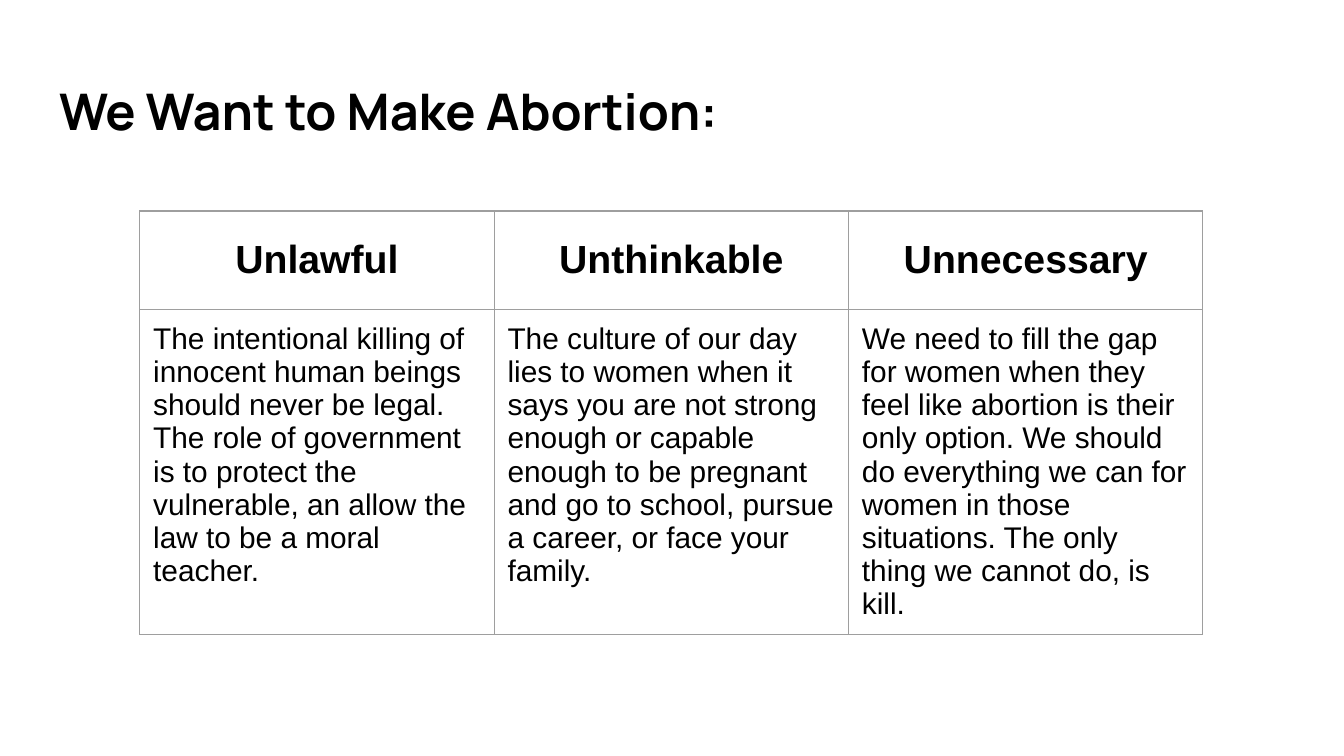
from dataclasses import dataclass

from lxml import etree
from pptx import Presentation
from pptx.dml.color import RGBColor
from pptx.enum.text import MSO_ANCHOR, PP_ALIGN
from pptx.oxml.ns import qn
from pptx.util import Inches, Pt

MIDDLE, TOP = MSO_ANCHOR.MIDDLE, MSO_ANCHOR.TOP
LEFT, CENTER = PP_ALIGN.LEFT, PP_ALIGN.CENTER
TITLE_ONLY = 5


@dataclass(frozen=True)
class Theme:
    background: str = "FFFFFF"
    text: str = "000000"
    border: str = "9E9E9E"
    border_width: float = 0.75
    title_font: str = "Manrope"
    body_font: str = "Arial"
    title_size: int = 27
    heading_size: int = 21
    body_size: int = 16
    inset: float = 0.1


THEME = Theme()

GOALS = {
    "Unlawful": "The intentional killing of innocent human beings should never be "
                "legal. The role of government is to protect the vulnerable, an "
                "allow the law to be a moral teacher.",
    "Unthinkable": "The culture of our day lies to women when it says you are not "
                   "strong enough or capable enough to be pregnant and go to school, "
                   "pursue a career, or face your family.",
    "Unnecessary": "We need to fill the gap for women when they feel like abortion is "
                   "their only option. We should do everything we can for women in "
                   "those situations. The only thing we cannot do, is kill.",
}


def style_paragraph(paragraph, font_name, size, bold, alignment):
    paragraph.alignment = alignment
    font = paragraph.font
    font.name = font_name
    font.size = Pt(size)
    font.bold = bold
    font.color.rgb = RGBColor.from_string(THEME.text)


def set_insets(box):
    """Give a cell or text frame equal margins on all four sides."""
    box.margin_left = box.margin_right = Inches(THEME.inset)
    box.margin_top = box.margin_bottom = Inches(THEME.inset)


def set_borders(cell):
    properties = cell._tc.get_or_add_tcPr()
    for position, side in enumerate(("lnL", "lnR", "lnT", "lnB")):
        line = etree.Element(qn(f"a:{side}"), w=str(Pt(THEME.border_width)))
        fill = etree.SubElement(line, qn("a:solidFill"))
        etree.SubElement(fill, qn("a:srgbClr"), val=THEME.border)
        properties.insert(position, line)


def add_title(slide, text, left, top, width, height):
    title = slide.shapes.title
    title.left, title.top = Inches(left), Inches(top)
    title.width, title.height = Inches(width), Inches(height)
    frame = title.text_frame
    frame.text = text
    frame.word_wrap = True
    frame.vertical_anchor = MIDDLE
    set_insets(frame)
    style_paragraph(frame.paragraphs[0], THEME.title_font, THEME.title_size, True, LEFT)


def add_goal_table(slide, goals, left, top, width, row_heights):
    """Place one column per goal: its heading above its explanation."""
    table = slide.shapes.add_table(
        len(row_heights), len(goals), Inches(left), Inches(top),
        Inches(width), Inches(sum(row_heights))).table
    table.first_row = table.horz_banding = False
    for row, height in zip(table.rows, row_heights):
        row.height = Inches(height)

    row_styles = (
        (THEME.heading_size, True, CENTER, MIDDLE),
        (THEME.body_size, False, LEFT, TOP),
    )
    for column, texts in enumerate(goals.items()):
        table.columns[column].width = Inches(width / len(goals))
        for row, (text, style) in enumerate(zip(texts, row_styles)):
            size, bold, alignment, anchor = style
            cell = table.cell(row, column)
            cell.text = text
            cell.vertical_anchor = anchor
            cell.fill.background()
            set_insets(cell)
            set_borders(cell)
            style_paragraph(cell.text_frame.paragraphs[0], THEME.body_font,
                            size, bold, alignment)


def build_goals_slide(presentation):
    slide = presentation.slides.add_slide(presentation.slide_layouts[TITLE_ONLY])
    background = slide.background.fill
    background.solid()
    background.fore_color.rgb = RGBColor.from_string(THEME.background)
    add_title(slide, "We Want to Make Abortion:", 0.34, 0.48, 9.32, 0.68)
    add_goal_table(slide, GOALS, 1.04, 1.57, 7.91, (0.73, 1.49))


def main():
    presentation = Presentation()
    presentation.slide_width = Inches(10)
    presentation.slide_height = Inches(10) * 9 // 16
    build_goals_slide(presentation)
    presentation.save("out.pptx")


if __name__ == "__main__":
    main()
